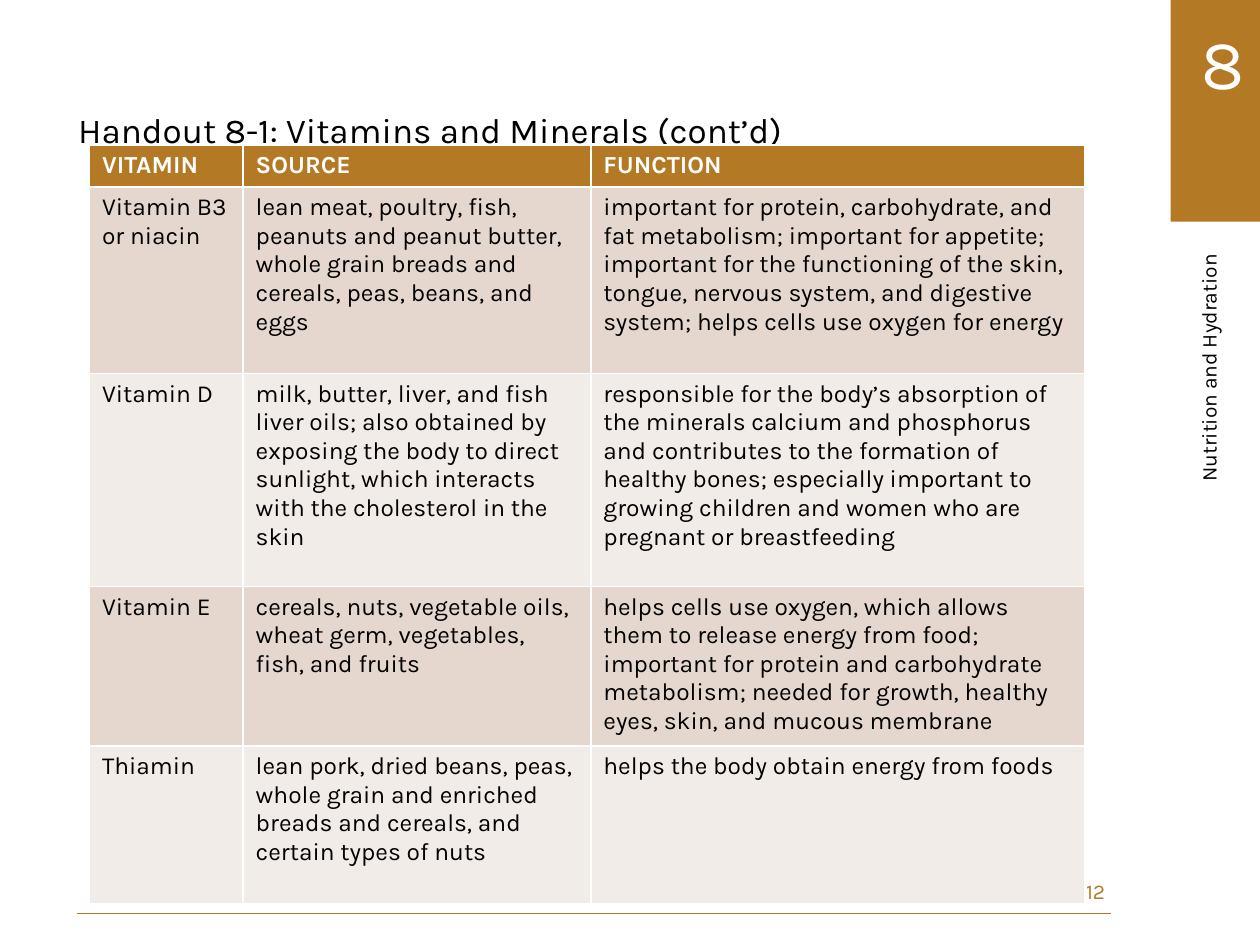
from dataclasses import dataclass

from lxml import etree
from pptx import Presentation
from pptx import util as u
from pptx.dml.color import RGBColor
from pptx.enum import shapes, text
from pptx.oxml import ns


@dataclass(frozen=True)
class Theme:
    font: str = "Karla"
    accent: str = "B37924"
    ink: str = "000000"
    paper: str = "FFFFFF"
    bands: tuple = ("E5D7CD", "F2ECE8")
    chapter_size: int = 40
    title_size: int = 20
    table_size: int = 14
    label_size: int = 12


def box(left, top, width, height):
    return [u.Inches(value) for value in (left, top, width, height)]


class HandoutSlide:
    def __init__(self, slide, theme):
        self.slide = slide
        self.theme = theme

    def set_text(self, frame, words, size, color, bold=False, align=text.PP_ALIGN.LEFT):
        frame.text = words
        paragraph = frame.paragraphs[0]
        paragraph.alignment = align
        for run in paragraph.runs:
            run.font.name = self.theme.font
            run.font.size = u.Pt(size)
            run.font.bold = bold
            run.font.color.rgb = RGBColor.from_string(color)
        return paragraph

    def title(self, words, area):
        shape = self.slide.shapes.title
        shape.left, shape.top, shape.width, shape.height = area
        frame = shape.text_frame
        frame.vertical_anchor = text.MSO_ANCHOR.TOP
        frame.auto_size = text.MSO_AUTO_SIZE.NONE
        paragraph = self.set_text(frame, words, self.theme.title_size, self.theme.ink)
        paragraph.line_spacing = 0.9
        paragraph.space_before = u.Pt(0)
        paragraph.space_after = u.Pt(6)

    def block(self, area, color):
        shape = self.slide.shapes.add_shape(shapes.MSO_SHAPE.RECTANGLE, *area)
        shape.shadow.inherit = False
        shape.fill.solid()
        shape.fill.fore_color.rgb = RGBColor.from_string(color)
        shape.line.fill.background()

    def label(self, words, area, size, color, align=text.PP_ALIGN.LEFT,
              anchor=text.MSO_ANCHOR.TOP, vertical=False):
        frame = self.slide.shapes.add_textbox(*area).text_frame
        frame.word_wrap = True
        frame.vertical_anchor = anchor
        if vertical:
            frame._txBody.bodyPr.set("vert", "vert270")
        self.set_text(frame, words, size, color, align=align)

    def rule(self, left, right, y):
        line = self.slide.shapes.add_connector(
            shapes.MSO_CONNECTOR.STRAIGHT,
            u.Inches(left), u.Inches(y), u.Inches(right), u.Inches(y))
        line.line.color.rgb = RGBColor.from_string(self.theme.accent)
        line.line.width = u.Pt(1)
        etree.SubElement(line._element.spPr, ns.qn("a:effectLst"))

    def table(self, rows, left, top, widths, heights):
        area = box(left, top, sum(widths), sum(heights))
        table = self.slide.shapes.add_table(len(rows), len(widths), *area).table
        for column, width in zip(table.columns, widths):
            column.width = u.Inches(width)
        for index, (row, height, entries) in enumerate(zip(table.rows, heights, rows)):
            row.height = u.Inches(height)
            header = index == 0
            fill = self.theme.accent if header else self.theme.bands[(index - 1) % 2]
            color = self.theme.paper if header else self.theme.ink
            for cell, words in zip(row.cells, entries):
                cell.fill.solid()
                cell.fill.fore_color.rgb = RGBColor.from_string(fill)
                self.set_text(cell.text_frame, words, self.theme.table_size, color, header)


VITAMINS = [
    ("VITAMIN", "SOURCE", "FUNCTION"),
    ("Vitamin B3 or niacin",
     "lean meat, poultry, fish, peanuts and peanut butter, whole grain breads "
     "and cereals, peas, beans, and eggs",
     "important for protein, carbohydrate, and fat metabolism; important for "
     "appetite; important for the functioning of the skin, tongue, nervous "
     "system, and digestive system; helps cells use oxygen for energy"),
    ("Vitamin D",
     "milk, butter, liver, and fish liver oils; also obtained by exposing the "
     "body to direct sunlight, which interacts with the cholesterol in the skin",
     "responsible for the body’s absorption of the minerals calcium and "
     "phosphorus and contributes to the formation of healthy bones; especially "
     "important to growing children and women who are pregnant or breastfeeding"),
    ("Vitamin E",
     "cereals, nuts, vegetable oils, wheat germ, vegetables, fish, and fruits",
     "helps cells use oxygen, which allows them to release energy from food; "
     "important for protein and carbohydrate metabolism; needed for growth, "
     "healthy eyes, skin, and mucous membrane"),
    ("Thiamin",
     "lean pork, dried beans, peas, whole grain and enriched breads and "
     "cereals, and certain types of nuts",
     "helps the body obtain energy from foods"),
]


def main():
    presentation = Presentation()
    presentation.slide_width, presentation.slide_height = u.Inches(10), u.Inches(7.5)
    theme = Theme()
    # Layout 5 is title only
    slide = presentation.slides.add_slide(presentation.slide_layouts[5])
    handout = HandoutSlide(slide, theme)

    # Chapter tab and side label
    handout.block(box(9.29, 0, 0.71, 1.76), theme.accent)
    handout.label("Nutrition and Hydration", box(9.44, 1.92, 0.4, 3.63),
                  theme.label_size, theme.ink, text.PP_ALIGN.RIGHT, vertical=True)
    handout.label("8", box(9.44, 0.11, 0.56, 0.77), theme.chapter_size, theme.paper)

    # Footer rule and page number
    handout.rule(0.61, 8.82, 7.25)
    handout.label("12", box(7.81, 6.87, 1.06, 0.4), theme.label_size, theme.accent,
                  text.PP_ALIGN.RIGHT, text.MSO_ANCHOR.MIDDLE)

    # Title and vitamin table
    handout.title("Handout 8-1: Vitamins and Minerals (cont’d)",
                  box(0.52, 0.85, 8.39, 5.9))
    handout.table(VITAMINS, 0.71, 1.15, widths=(1.22, 2.76, 3.92),
                  heights=(0.33, 1.48, 1.69, 1.25, 1.25))

    presentation.save("out.pptx")


if __name__ == "__main__":
    main()
